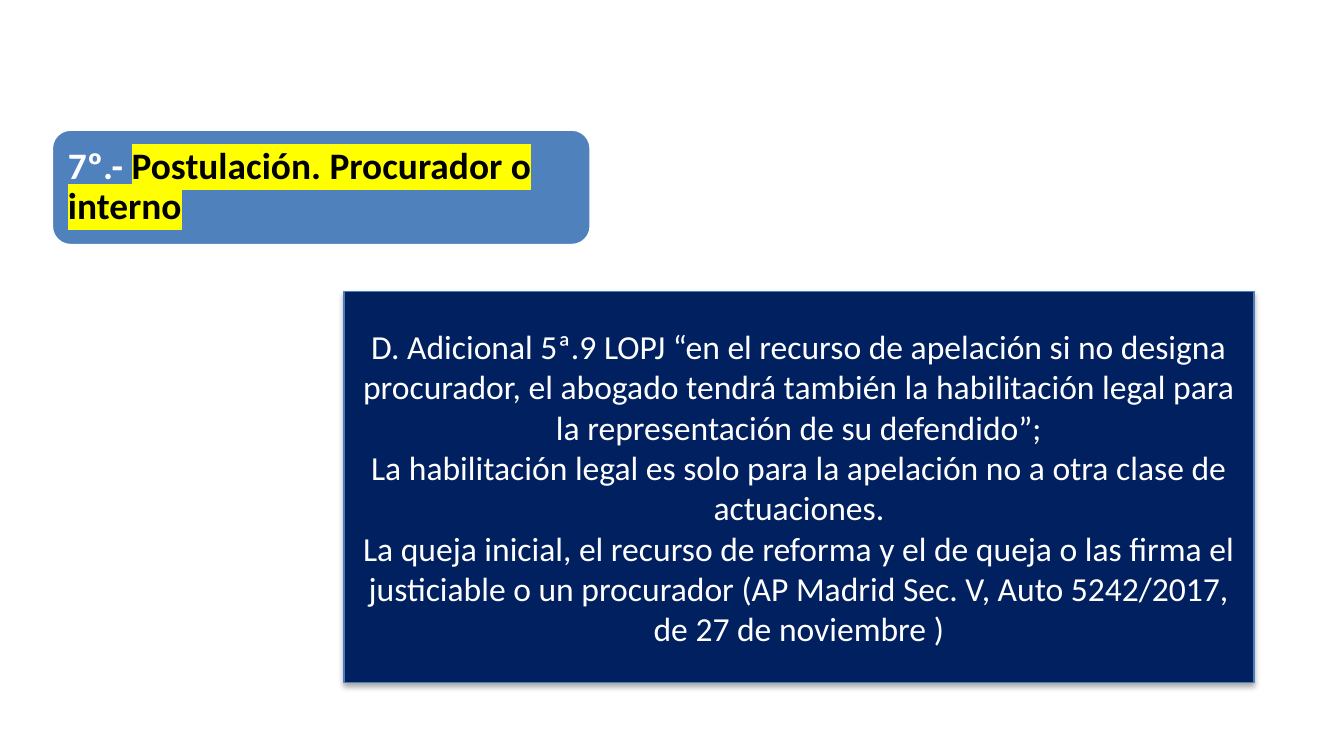
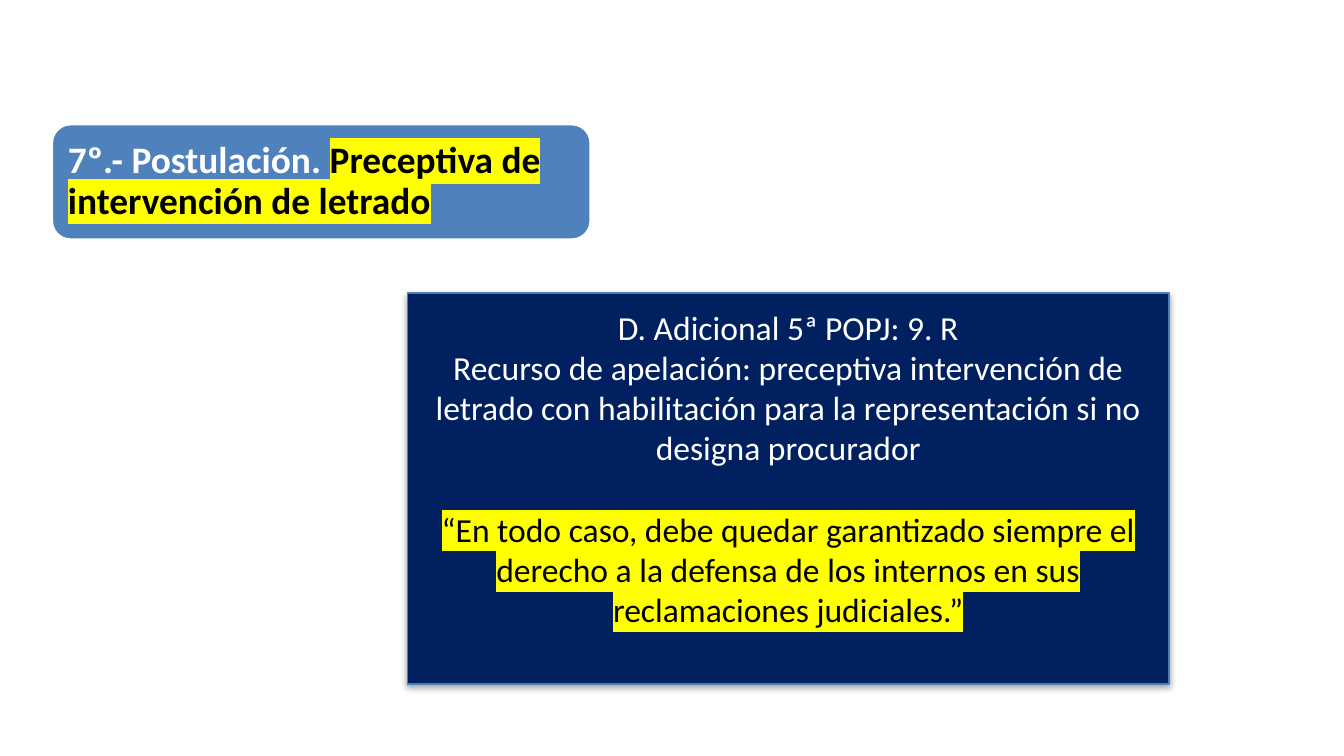
from dataclasses import dataclass

from lxml import etree
from pptx import Presentation
from pptx.dml.color import RGBColor
from pptx.enum.shapes import MSO_SHAPE
from pptx.enum.text import MSO_ANCHOR, MSO_AUTO_SIZE, PP_ALIGN
from pptx.oxml.ns import qn
from pptx.util import Pt

ROUNDED, RECTANGLE = MSO_SHAPE.ROUNDED_RECTANGLE, MSO_SHAPE.RECTANGLE
MIDDLE, NO_FIT = MSO_ANCHOR.MIDDLE, MSO_AUTO_SIZE.NONE
LEFT, CENTER = PP_ALIGN.LEFT, PP_ALIGN.CENTER
TITLE_ONLY = 5


@dataclass(frozen=True)
class Theme:
    font: str = "Calibri"
    title_size: float = 20
    body_size: float = 18
    band: str = "4F81BD"
    panel: str = "002060"
    panel_line: str = "4B7EBC"
    light: str = "FFFFFF"
    dark: str = "000000"
    marker: str = "FFFF00"


THEME = Theme()


@dataclass(frozen=True)
class Box:
    left: float
    top: float
    width: float
    height: float

    def inset(self, gap: float) -> "Box":
        return Box(self.left + gap, self.top + gap,
                   self.width - 2 * gap, self.height - 2 * gap)

    def lengths(self) -> tuple:
        return Pt(self.left), Pt(self.top), Pt(self.width), Pt(self.height)


@dataclass(frozen=True)
class Span:
    text: str
    marked: bool = False


@dataclass(frozen=True)
class Para:
    spans: tuple[Span, ...]
    space_before: float = 0


@dataclass(frozen=True)
class Topic:
    band_top: float
    title: Para
    panel: Box
    body: tuple[Para, ...]
    bottom_inset: float = 3.6


BODY_LINE = 22  # height of one line of body text

TOPICS = (
    Topic(
        69.1,
        Para((Span("7º.- "), Span("Postulación. Procurador o interno", True))),
        Box(184.3, 156.2, 487.5, 209.5),
        (
            Para((Span("D. Adicional 5ª.9 LOPJ “en el recurso de apelación si no "
                       "designa procurador, el abogado tendrá también la habilitación "
                       "legal para la representación de su defendido”;"),)),
            Para((Span("La habilitación legal es solo para la apelación no a otra "
                       "clase de actuaciones."),)),
            Para((Span("La queja inicial, el recurso de reforma y el de queja o las "
                       "firma el justiciable o un procurador (AP Madrid Sec. V, Auto "
                       "5242/2017, de 27 de noviembre )"),)),
        ),
    ),
    Topic(
        66.2,
        Para((Span("7º.- Postulación. "),
              Span("Preceptiva de intervención de letrado", True))),
        Box(218.2, 157, 408.2, 209.5),
        (
            Para((Span("D. Adicional 5ª POPJ: 9. R"),)),
            Para((Span("Recurso de apelación: preceptiva intervención de letrado con "
                       "habilitación para la representación si no designa "
                       "procurador"),)),
            Para((Span("“En todo caso, debe quedar garantizado siempre el derecho a "
                       "la defensa de los internos en sus reclamaciones "
                       "judiciales.”", True),), space_before=BODY_LINE),
        ),
        bottom_inset=3.6 + BODY_LINE,
    ),
)


def rgb(value: str) -> RGBColor:
    return RGBColor.from_string(value)


def add_highlight(run, color: str) -> None:
    """Mark a run whose font colour is already set."""
    highlight = etree.Element(qn("a:highlight"))
    etree.SubElement(highlight, qn("a:srgbClr"), val=color)
    run.font._element.find(qn("a:solidFill")).addnext(highlight)


def write_text(shape, paras, *, size: float, align, bold: bool = False,
               line_spacing: float = 1.0, insets=(7.2, 3.6, 7.2, 3.6)) -> None:
    frame = shape.text_frame
    frame.word_wrap = True
    frame.auto_size = NO_FIT
    frame.vertical_anchor = MIDDLE
    (frame.margin_left, frame.margin_top,
     frame.margin_right, frame.margin_bottom) = map(Pt, insets)
    for index, para in enumerate(paras):
        paragraph = frame.paragraphs[0] if index == 0 else frame.add_paragraph()
        paragraph.alignment = align
        paragraph.line_spacing = line_spacing
        if para.space_before:
            paragraph.space_before = Pt(para.space_before)
        for span in para.spans:
            run = paragraph.add_run()
            run.text = span.text
            run.font.size = Pt(size)
            run.font.bold = bold
            run.font.color.rgb = rgb(THEME.dark if span.marked else THEME.light)
            if span.marked:
                add_highlight(run, THEME.marker)
            run.font.name = THEME.font


def add_block(page, kind, box: Box, *, fill: str, line: str, line_width: float):
    shape = page.shapes.add_shape(kind, *box.lengths())
    shape.shadow.inherit = False
    shape.fill.solid()
    shape.fill.fore_color.rgb = rgb(fill)
    shape.line.color.rgb = rgb(line)
    shape.line.width = Pt(line_width)
    return shape


def add_shadow(shape) -> None:
    effects = shape.element.spPr.find(qn("a:effectLst"))
    shadow = etree.SubElement(effects, qn("a:outerShdw"), blurRad=str(Pt(3.1)),
                              dist=str(Pt(1.8)), dir="5400000", rotWithShape="0")
    color = etree.SubElement(shadow, qn("a:srgbClr"), val=THEME.dark)
    etree.SubElement(color, qn("a:alpha"), val="35000")


def add_topic(deck, topic: Topic) -> None:
    page = deck.slides.add_slide(deck.slide_layouts[TITLE_ONLY])

    # Title on its rounded band
    band = Box(27.4, topic.band_top, 289.4, 62.6)
    add_block(page, ROUNDED, band, fill=THEME.band, line=THEME.light, line_width=2)
    title = page.shapes.title
    title.left, title.top, title.width, title.height = band.inset(3).lengths()
    title.element.getparent().append(title.element)  # bring in front of the band
    write_text(title, (topic.title,), size=THEME.title_size, align=LEFT, bold=True,
               line_spacing=0.9, insets=(6, 6, 6, 6))

    # Panel with the legal text
    panel = add_block(page, RECTANGLE, topic.panel, fill=THEME.panel,
                      line=THEME.panel_line, line_width=0.75)
    add_shadow(panel)
    write_text(panel, topic.body, size=THEME.body_size, align=CENTER,
               insets=(7.2, 3.6, 7.2, topic.bottom_inset))


def main() -> None:
    deck = Presentation()
    deck.slide_width, deck.slide_height = Pt(720), Pt(405)
    for topic in TOPICS:
        add_topic(deck, topic)
    deck.save("out.pptx")


if __name__ == "__main__":
    main()
